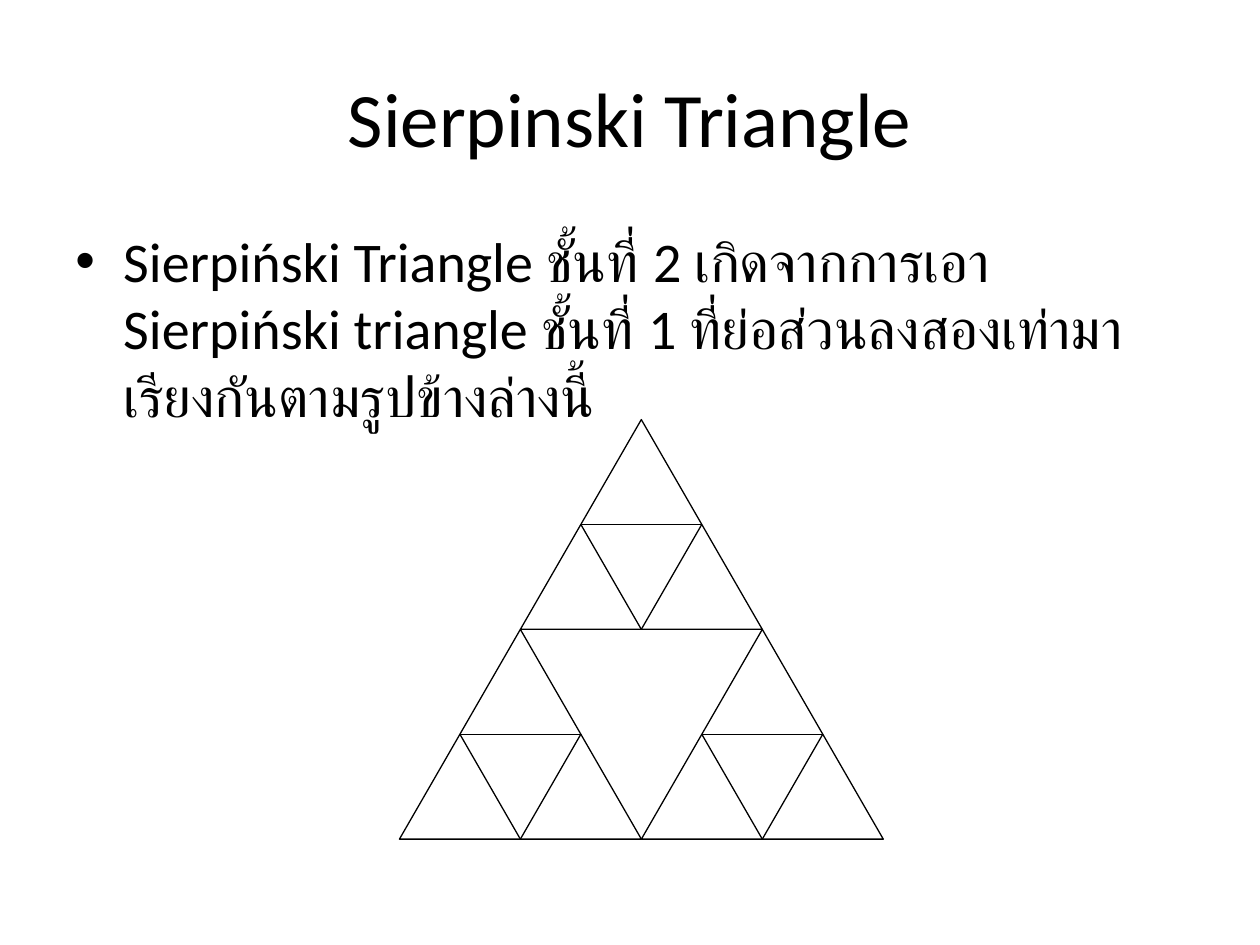
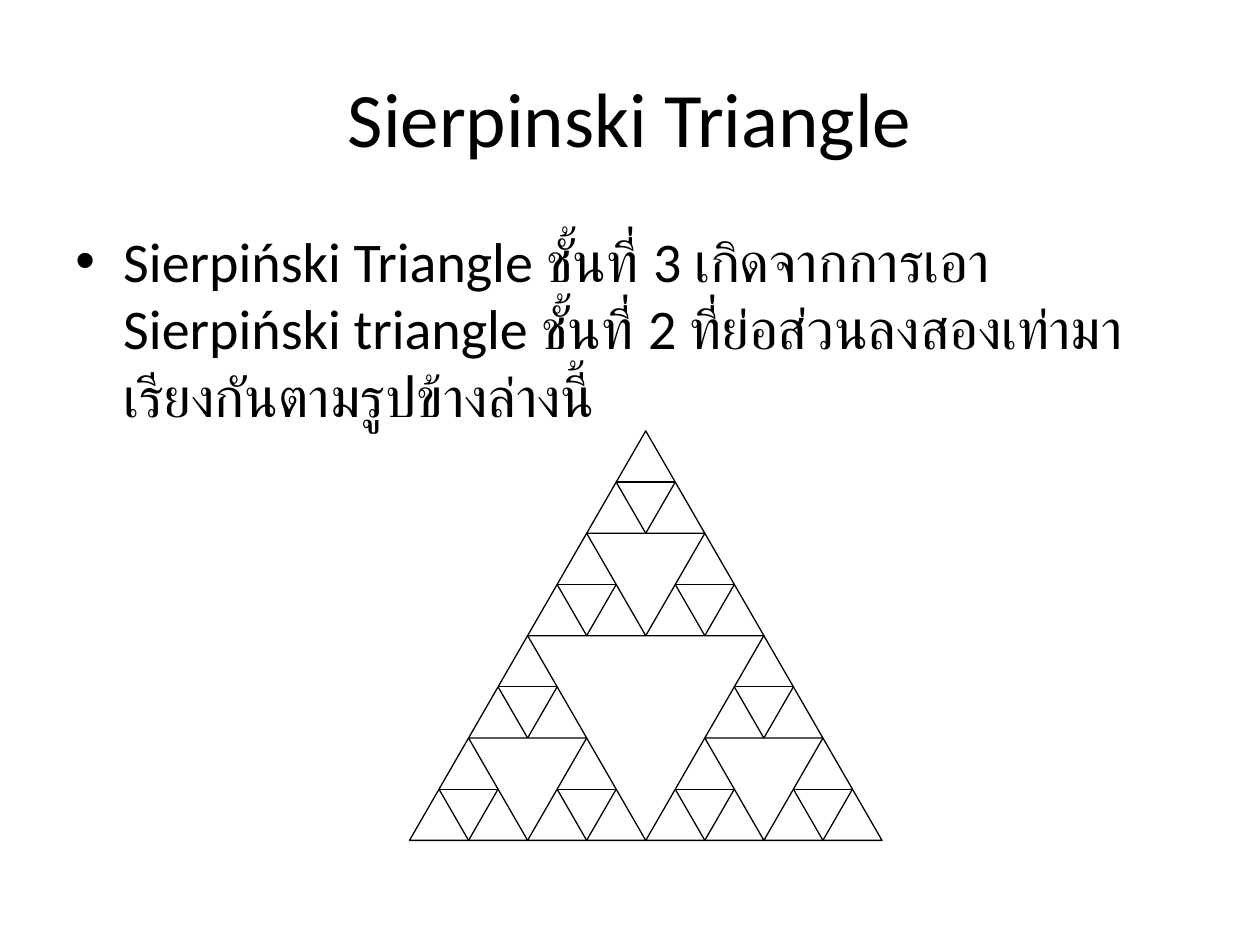
from lxml import etree
from pptx import Presentation
from pptx.dml.color import RGBColor
from pptx.enum.shapes import MSO_CONNECTOR, MSO_SHAPE
from pptx.enum.text import MSO_ANCHOR, PP_ALIGN
from pptx.oxml.ns import qn
from pptx.util import Inches, Pt

STRAIGHT = MSO_CONNECTOR.STRAIGHT
TRIANGLE = MSO_SHAPE.ISOSCELES_TRIANGLE
MIDDLE, TOP = MSO_ANCHOR.MIDDLE, MSO_ANCHOR.TOP
CENTER, LEFT = PP_ALIGN.CENTER, PP_ALIGN.LEFT

TITLE = "Sierpinski Triangle"
BODY = ("Sierpiński Triangle ชั้นที่ {level} เกิดจากการเอา Sierpiński triangle ชั้นที่ {previous} "
        "ที่ย่อส่วนลงสองเท่ามาเรียงกันตามรูปข้างล่างนี้")
FIGURES = [
    {"level": 2, "box": (3.17, 3.33, 3.84, 3.33)},
    {"level": 3, "box": (3.25, 3.42, 3.75, 3.25)},
]
TITLE_BOX = (0.5, 0.3, 9, 1.25)
BODY_BOX = (0.5, 1.75, 9, 4.95)
FONT, INK, PAPER = "Calibri", "000000", "FFFFFF"
LINE_WIDTH = Pt(0.75)
BULLET_INDENT = Inches(0.38)


def color(value):
    return RGBColor.from_string(value)


def add_text(slide, box, text, size, anchor, alignment):
    text_frame = slide.shapes.add_textbox(*map(Inches, box)).text_frame
    text_frame.word_wrap = True
    text_frame.vertical_anchor = anchor
    text_frame.text = text
    paragraph = text_frame.paragraphs[0]
    paragraph.alignment = alignment
    font = paragraph.runs[0].font
    font.name, font.size = FONT, Pt(size)
    font.color.rgb = color(INK)
    return paragraph


def add_bullet(paragraph):
    properties = paragraph._p.get_or_add_pPr()
    properties.set("marL", str(BULLET_INDENT))
    properties.set("indent", str(-BULLET_INDENT))
    etree.SubElement(properties, qn("a:buFont")).set("typeface", "Arial")
    etree.SubElement(properties, qn("a:buChar")).set("char", "•")


def draw_line(shape):
    shape.line.color.rgb = color(INK)
    shape.line.width = LINE_WIDTH


def add_first_level(slide, left, top, width, height):
    triangle = slide.shapes.add_shape(TRIANGLE, *map(Inches, (left, top, width, height)))
    triangle.shadow.inherit = False
    triangle.fill.solid()
    triangle.fill.fore_color.rgb = color(PAPER)
    draw_line(triangle)
    left_middle = (left + width / 4, top + height / 2)
    right_middle = (left + width * 3 / 4, top + height / 2)
    base_middle = (left + width / 2, top + height)
    for start, end in ((left_middle, right_middle), (base_middle, right_middle),
                       (base_middle, left_middle)):
        side = slide.shapes.add_connector(STRAIGHT, *map(Inches, start + end))
        draw_line(side)
        etree.SubElement(side._element.spPr, qn("a:effectLst"))


def add_sierpinski(slide, level, left, top, width, height):
    if level == 1:
        add_first_level(slide, left, top, width, height)
        return
    half_width, half_height = width / 2, height / 2
    for across, down in ((half_width, half_height), (0, half_height), (half_width / 2, 0)):
        add_sierpinski(slide, level - 1, left + across, top + down, half_width, half_height)


def main():
    """Build one slide for each level of the Sierpinski triangle."""
    presentation = Presentation()
    presentation.slide_width, presentation.slide_height = Inches(10), Inches(7.5)
    for figure in FIGURES:
        level = figure["level"]
        slide = presentation.slides.add_slide(presentation.slide_layouts[6])
        add_text(slide, TITLE_BOX, TITLE, 44, MIDDLE, CENTER)
        body = BODY.format(level=level, previous=level - 1)
        paragraph = add_text(slide, BODY_BOX, body, 32, TOP, LEFT)
        paragraph.space_before = Pt(6.4)
        add_bullet(paragraph)
        add_sierpinski(slide, level, *figure["box"])
    presentation.save("out.pptx")


if __name__ == "__main__":
    main()
